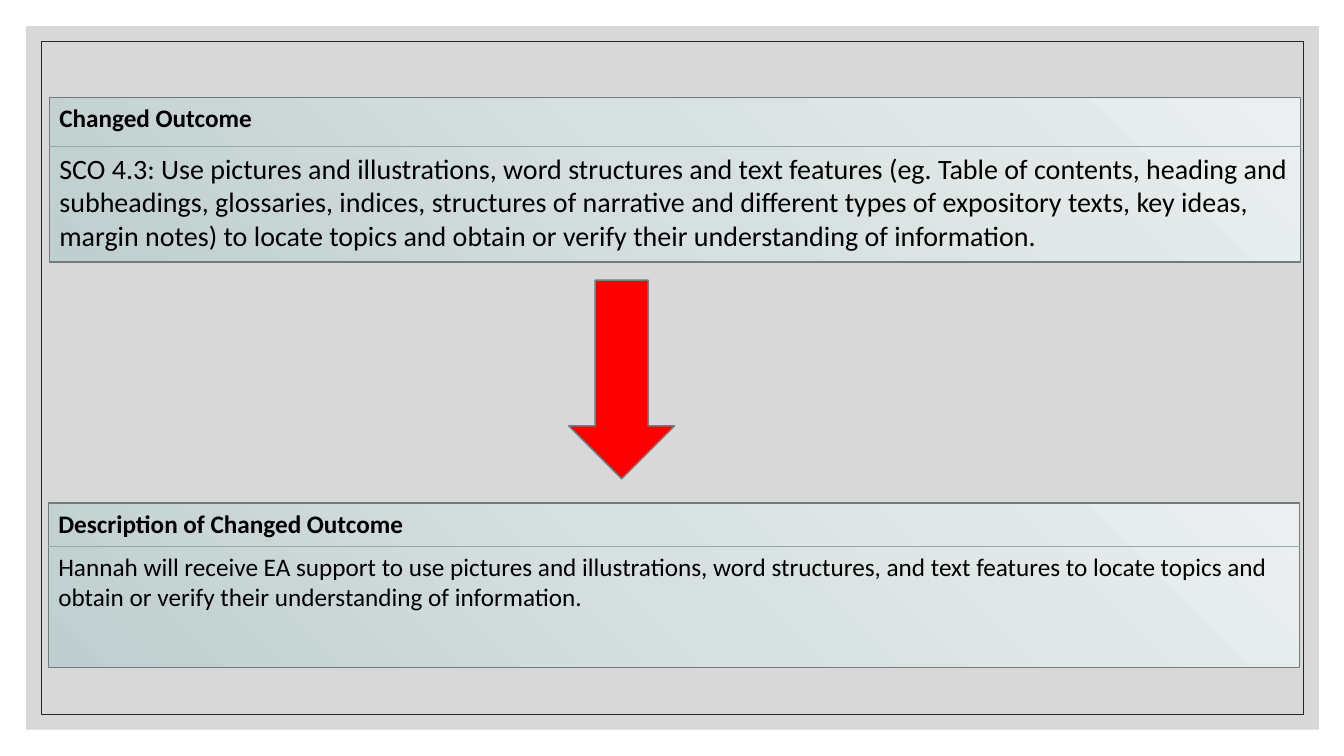
from copy import deepcopy

from lxml import etree
from pptx import Presentation
from pptx.dml.color import RGBColor
from pptx.enum.shapes import MSO_CONNECTOR, MSO_SHAPE
from pptx.enum.text import MSO_AUTO_SIZE
from pptx.oxml.ns import qn
from pptx.util import Inches, Pt

RECTANGLE = MSO_SHAPE.RECTANGLE
DOWN_ARROW = MSO_SHAPE.DOWN_ARROW
STRAIGHT = MSO_CONNECTOR.STRAIGHT
GROW = MSO_AUTO_SIZE.SHAPE_TO_FIT_TEXT

FONT = "Calibri"
COLORS = {
    "backdrop": "BFBFBF",
    "frame": "262626",
    "arrow": "FF0000",
    "outline": "6F7D7D",
    "divider": "96A9A9",
    "text": "000000",
    "panel_dark": "BFCECE",
    "panel_middle": "D7E0E0",
    "panel_light": "EBEFEF",
}
PANEL_STOPS = [(0, "panel_dark"), (0.5, "panel_middle"), (1, "panel_light")]
PANEL_WIDTH, PANEL_HEIGHT = 12.41, 1.63

# left, top, divider offset, heading, description, description size
PANELS = [
    (0.49, 0.97, 0.48, "Changed Outcome",
     "SCO 4.3: Use pictures and illustrations, word structures and text features "
     "(eg. Table of contents, heading and subheadings, glossaries, indices, "
     "structures of narrative and different types of expository texts, key ideas, "
     "margin notes) to locate topics and obtain or verify their understanding of "
     "information.", 20),
    (0.48, 4.99, 0.43, "Description of Changed Outcome",
     "Hannah will receive EA support to use pictures and illustrations, word "
     "structures, and text features to locate topics and obtain or verify their "
     "understanding of information.", 18),
]


def add_box(kind, left, top, width, height, fill=None, line=None, weight=1):
    shape = slide.shapes.add_shape(
        kind, Inches(left), Inches(top), Inches(width), Inches(height))
    shape.shadow.inherit = False
    if fill:
        shape.fill.solid()
        shape.fill.fore_color.rgb = RGBColor.from_string(COLORS[fill])
    else:
        shape.fill.background()
    if line:
        shape.line.color.rgb = RGBColor.from_string(COLORS[line])
        shape.line.width = Pt(weight)
    else:
        shape.line.fill.background()
    return shape


def add_text(left, top, height, text, size, bold=False):
    box = slide.shapes.add_textbox(
        Inches(left), Inches(top), Inches(PANEL_WIDTH), Inches(height))
    frame = box.text_frame
    frame.word_wrap = True
    frame.auto_size = GROW
    run = frame.paragraphs[0].add_run()
    run.text = text
    run.font.name = FONT
    run.font.size = Pt(size)
    run.font.bold = bold
    run.font.color.rgb = RGBColor.from_string(COLORS["text"])


presentation = Presentation()
presentation.slide_width = Inches(13.33)
presentation.slide_height = Inches(7.5)
slide = presentation.slides.add_slide(presentation.slide_layouts[6])

# Translucent backdrop and thin frame
backdrop = add_box(RECTANGLE, 0.26, 0.26, 12.82, 6.98, fill="backdrop")
backdrop_color = backdrop._element.spPr.find(qn("a:solidFill"))[0]
etree.SubElement(backdrop_color, qn("a:alpha")).set("val", "60000")
add_box(RECTANGLE, 0.41, 0.41, 12.52, 6.68, line="frame", weight=0.5)

# Arrow from the outcome to its description
add_box(DOWN_ARROW, 5.64, 2.78, 1.05, 1.97, fill="arrow", line="outline")

# Gradient panels with heading, divider and description
for left, top, offset, heading, description, size in PANELS:
    panel = add_box(RECTANGLE, left, top, PANEL_WIDTH, PANEL_HEIGHT, line="outline")
    panel.fill.gradient()
    panel.fill.gradient_angle = 45
    stop_list = panel._element.spPr.find(qn("a:gradFill")).find(qn("a:gsLst"))
    stop_list.insert(1, deepcopy(stop_list[0]))
    for stop, (position, color) in zip(panel.fill.gradient_stops, PANEL_STOPS):
        stop.position = position
        stop.color.rgb = RGBColor.from_string(COLORS[color])

    divider_top = top + offset
    divider = slide.shapes.add_connector(
        STRAIGHT, Inches(left), Inches(divider_top),
        Inches(left + PANEL_WIDTH), Inches(divider_top))
    divider.line.color.rgb = RGBColor.from_string(COLORS["divider"])
    divider.line.width = Pt(0.5)
    etree.SubElement(divider._element.spPr, qn("a:effectLst"))

    add_text(left, top, 0.4, heading, 18, bold=True)
    add_text(left, divider_top, 1.11 if size == 20 else 0.71, description, size)

presentation.save("out.pptx")
